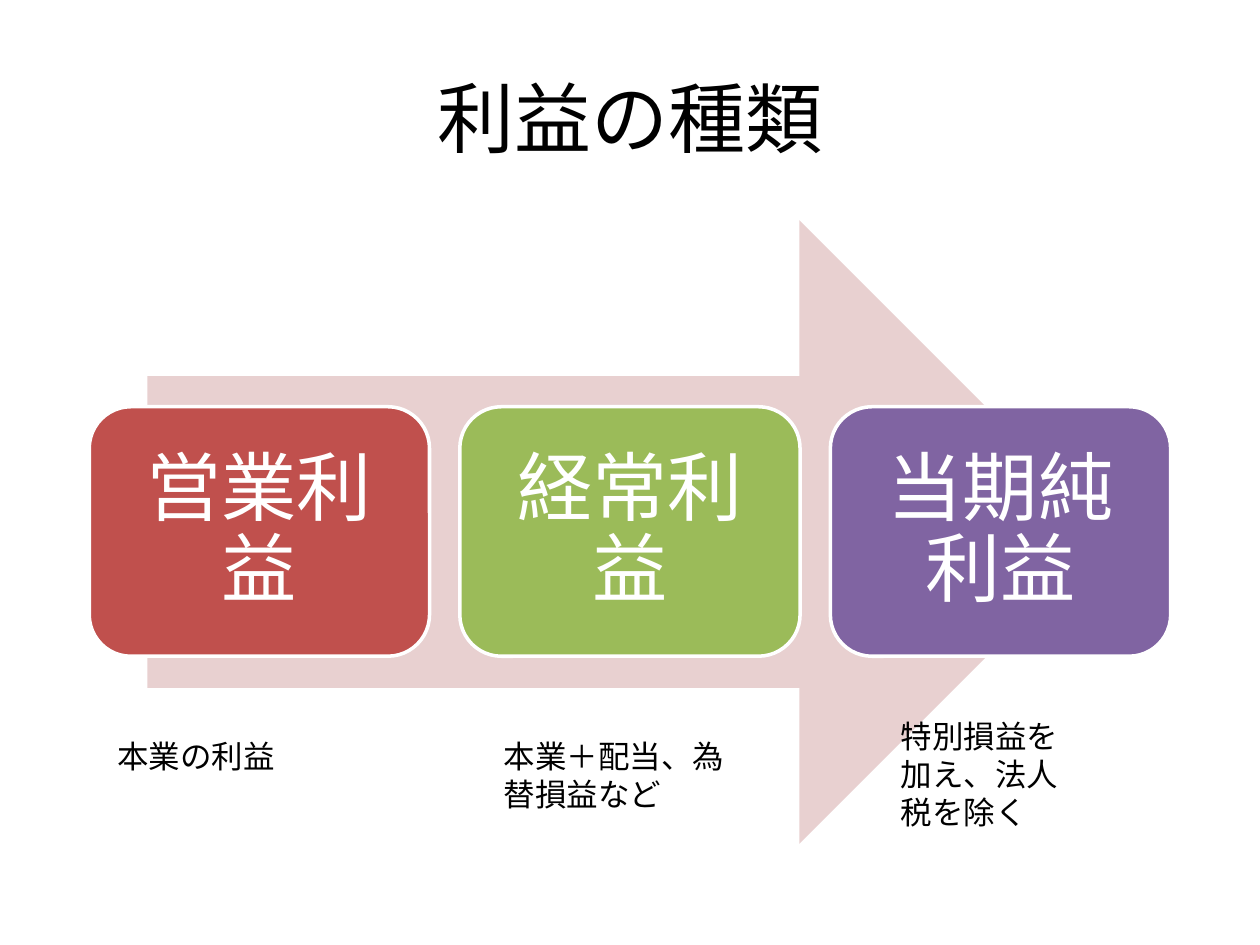
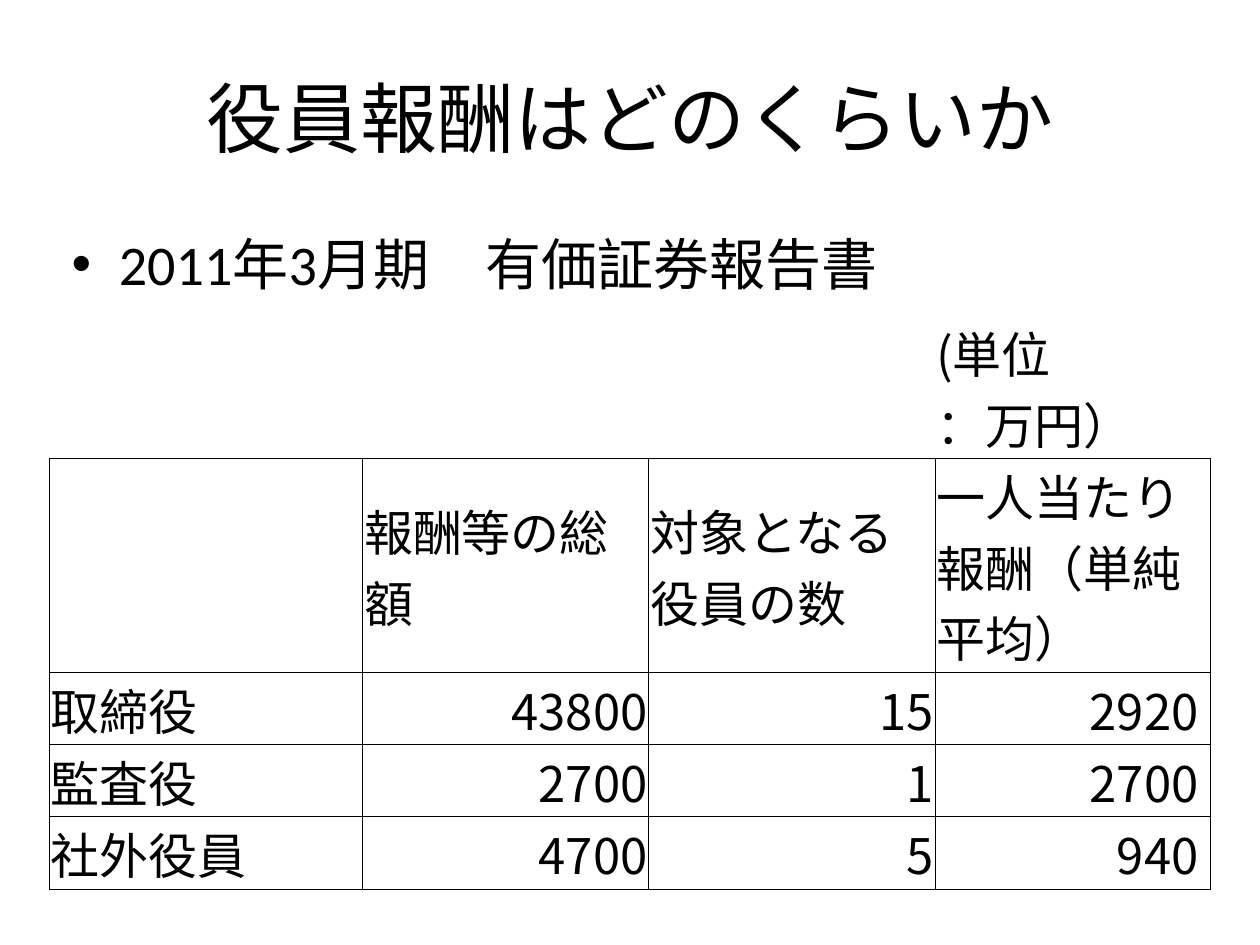
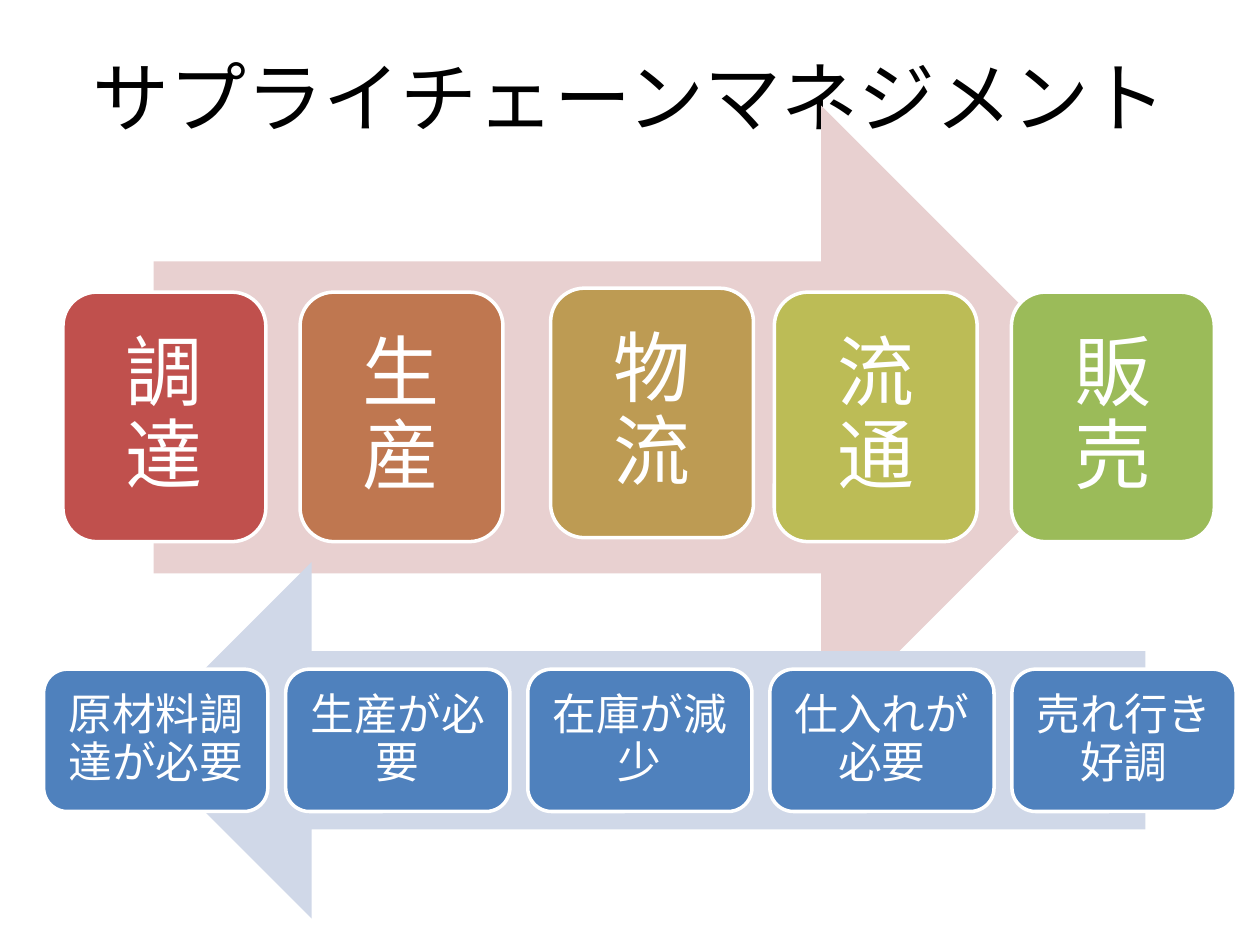
from pptx import Presentation
from pptx.dml.color import RGBColor
from pptx.enum.shapes import MSO_SHAPE
from pptx.enum.text import MSO_ANCHOR, MSO_AUTO_SIZE, PP_ALIGN
from pptx.oxml.ns import qn
from pptx.util import Cm, Pt
from lxml import etree

RIGHT_ARROW = MSO_SHAPE.RIGHT_ARROW
LEFT_ARROW = MSO_SHAPE.LEFT_ARROW
ROUNDED_BOX = MSO_SHAPE.ROUNDED_RECTANGLE
MIDDLE = MSO_ANCHOR.MIDDLE
GROW = MSO_AUTO_SIZE.SHAPE_TO_FIT_TEXT
LEFT, CENTER, RIGHT = PP_ALIGN.LEFT, PP_ALIGN.CENTER, PP_ALIGN.RIGHT

TITLE_ONLY, TITLE_AND_BODY = 5, 1
FONT = "Calibri"
TABLE_FONT = "Noto Sans CJK JP"

COLORS = {
    "text": "000000",
    "white": "FFFFFF",
    "pink": "E8D0D0",
    "pale_blue": "D0D8E8",
    "red": "C0504D",
    "orange": "BF7750",
    "ochre": "BD9B53",
    "lime": "BCBC56",
    "green": "9BBB59",
    "purple": "8064A2",
    "blue": "4F81BD",
}


def rgb(name):
    return RGBColor.from_string(COLORS[name])


def place(shape, left, top, width, height):
    shape.left, shape.top = Cm(left), Cm(top)
    shape.width, shape.height = Cm(width), Cm(height)


def set_margins(target, side, bottom):
    target.margin_left = target.margin_right = target.margin_top = Cm(side)
    target.margin_bottom = Cm(bottom)


def add_border(cell, side):
    line = etree.SubElement(cell._tc.get_or_add_tcPr(), qn(f"a:ln{side}"), w=str(Pt(0.5)))
    fill = etree.SubElement(line, qn("a:solidFill"))
    etree.SubElement(fill, qn("a:srgbClr"), val=COLORS["text"])


class Deck:
    """Holds the presentation, its style and the current slide."""

    def __init__(self):
        self.presentation = Presentation()
        self.presentation.slide_width = Cm(25.4)
        self.presentation.slide_height = Cm(19.05)
        self.slide = None

    def style(self, text_frame, size, color="text", align=LEFT, font=FONT):
        for paragraph in text_frame.paragraphs:
            paragraph.alignment = align
            for run in paragraph.runs:
                run.font.size = Pt(size)
                run.font.name = font
                run.font.color.rgb = rgb(color)

    def new_slide(self, title, layout=TITLE_ONLY, title_top=0.76):
        self.slide = self.presentation.slides.add_slide(
            self.presentation.slide_layouts[layout])
        shape = self.slide.shapes.title
        place(shape, 1.27, title_top, 22.86, 3.18)
        shape.text_frame.text = title
        self.style(shape.text_frame, 44, align=CENTER)

    def body(self, text, *area):
        shape = self.slide.placeholders[1]
        place(shape, *area)
        shape.text_frame.text = text
        self.style(shape.text_frame, 32)

    def shape(self, kind, color, left, top, width, height):
        shape = self.slide.shapes.add_shape(
            kind, Cm(left), Cm(top), Cm(width), Cm(height))
        shape.shadow.inherit = False
        shape.fill.solid()
        shape.fill.fore_color.rgb = rgb(color)
        shape.line.fill.background()
        return shape

    def box(self, text, color, size, margin, *area):
        shape = self.shape(ROUNDED_BOX, color, *area)
        shape.line.color.rgb = rgb("white")
        shape.line.width = Pt(2)
        frame = shape.text_frame
        frame.text = text
        frame.word_wrap = True
        frame.vertical_anchor = MIDDLE
        set_margins(frame, margin, margin)
        frame.paragraphs[0].line_spacing = 0.9
        self.style(frame, size, "white", CENTER)

    def caption(self, text, left, top, width, height):
        frame = self.slide.shapes.add_textbox(
            Cm(left), Cm(top), Cm(width), Cm(height)).text_frame
        frame.text = text
        frame.word_wrap = True
        frame.auto_size = GROW
        self.style(frame, 18)

    def table(self, rows, widths, heights, *area):
        """Draw a ruled table whose first row is an unframed unit note."""
        frame = self.slide.shapes.add_table(
            len(rows), len(widths), *(Cm(length) for length in area))
        table = frame.table
        table.first_row = table.horz_banding = False
        for column, width in zip(table.columns, widths):
            column.width = Cm(width)
        for row, height in zip(table.rows, heights):
            row.height = Cm(height)
        for row_index, values in enumerate(rows):
            for column_index, value in enumerate(values):
                cell = table.cell(row_index, column_index)
                for side in "LRTB" if row_index else "B":
                    add_border(cell, side)
                cell.fill.solid()
                cell.fill.fore_color.rgb = rgb("white")
                cell.vertical_anchor = MIDDLE
                set_margins(cell, 0.03, 0)
                cell.text_frame.text = value
                is_number = value.strip().isdigit()
                self.style(cell.text_frame, 28, align=RIGHT if is_number else LEFT,
                           font=TABLE_FONT)
                for paragraph in cell.text_frame.paragraphs:
                    for run in paragraph.runs:
                        etree.SubElement(run._r.get_or_add_rPr(), qn("a:ea"),
                                         typeface=TABLE_FONT)


def profit_slide(deck):
    deck.new_slide("利益の種類")
    deck.shape(RIGHT_ARROW, "pink", 2.97, 4.44, 19.43, 12.57)
    profits = [("営業利益", "red"), ("経常利益", "green"), ("当期純利益", "purple")]
    for index, (name, color) in enumerate(profits):
        deck.box(name, color, 43, 0.46, 1.8 + 7.47 * index, 8.2, 6.86, 5.03)
    deck.caption("本業の利益", 2.11, 14.73, 5.41, 1.02)
    deck.caption("本業＋配当、為替損益など", 9.91, 14.73, 5.41, 1.8)
    deck.caption("特別損益を加え、法人税を除く", 17.91, 14.33, 4.19, 2.57)


def remuneration_slide(deck):
    deck.new_slide("役員報酬はどのくらいか", TITLE_AND_BODY)
    deck.body("2011年3月期　有価証券報告書", 1.19, 4.5, 22.86, 2.46)
    rows = [
        ["", "", "", "(単位\n：万円）"],
        ["", "報酬等の総額", "対象となる役員の数", "一人当たり報酬（単純平均）"],
        ["取締役", "43800", "15", "2920 "],
        ["監査役", "2700", "1", "2700 "],
        ["社外役員", "4700", "5", "940 "],
    ]
    deck.table(rows, [6.32, 5.77, 5.77, 5.56], [1.12, 3.89, 1.45, 1.45, 1.45],
               0.99, 6.35, 23.42, 10.64)


def supply_chain_slide(deck):
    deck.new_slide("サプライチェーンマネジメント", title_top=0.33)
    deck.shape(RIGHT_ARROW, "pink", 3.1, 2.13, 19.74, 12.57)
    # Name, colour and offset from the even row
    stages = [
        ("調達", "red", 0, 0),
        ("生産", "orange", 0, 0),
        ("物流", "ochre", 0.27, -0.08),
        ("流通", "lime", 0, 0),
        ("販売", "green", 0, 0),
    ]
    for index, (name, color, shift_x, shift_y) in enumerate(stages):
        deck.box(name, color, 44, 0.46,
                 1.27 + 4.78 * index + shift_x, 5.89 + shift_y, 4.09, 5.03)

    deck.shape(LEFT_ARROW, "pale_blue", 2.69, 11.33, 20.4, 7.19)
    feedback = ["売れ行き好調", "仕入れが必要", "在庫が減少", "生産が必要", "原材料調達が必要"]
    for index, text in enumerate(feedback):
        deck.box(text, "blue", 25, 0.25, 20.4 - 4.88 * index, 13.49, 4.52, 2.87)


def main():
    deck = Deck()
    profit_slide(deck)
    remuneration_slide(deck)
    supply_chain_slide(deck)
    deck.presentation.save("out.pptx")


if __name__ == "__main__":
    main()
